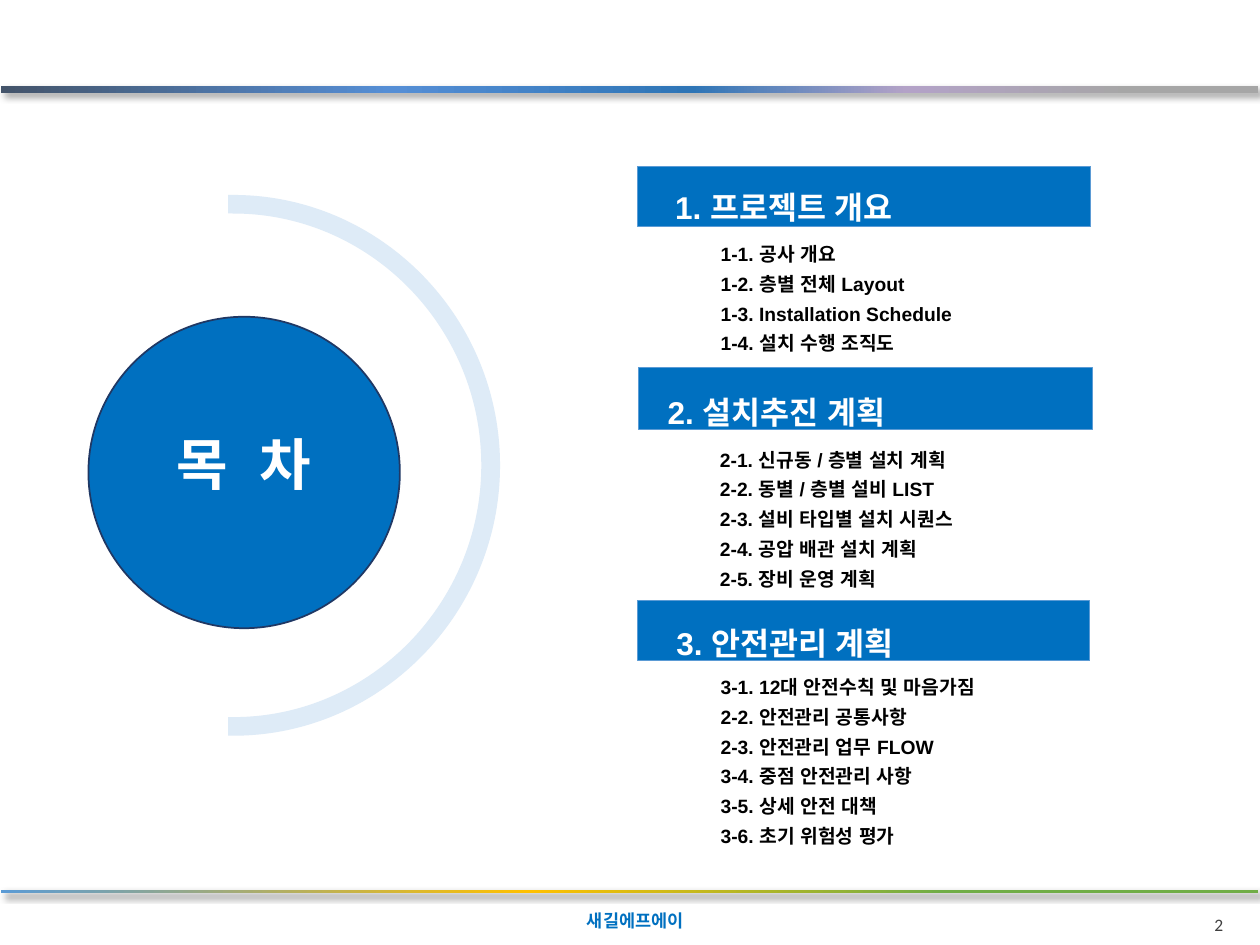
from lxml.etree import SubElement
from pptx import Presentation
from pptx.dml.color import RGBColor
from pptx.enum.shapes import MSO_SHAPE as Shape
from pptx.enum.text import MSO_ANCHOR as Anchor, MSO_AUTO_SIZE as AutoSize, PP_ALIGN as Align
from pptx.oxml import parse_xml
from pptx.oxml.ns import nsdecls, qn
from pptx.util import Pt

BLUE = "0070C0"


def color(value):
    return RGBColor.from_string(value)


class Page:
    def __init__(self, slide, face="Arial"):
        self.shapes = slide.shapes
        self.face = face

    def paint(self, shape, fill, edge, weight):
        shape.shadow.inherit = False
        shape.fill.solid()
        shape.fill.fore_color.rgb = color(fill)
        shape.line.color.rgb = color(edge)
        shape.line.width = Pt(weight)

    def block(self, kind, box, fill, edge, weight):
        self.paint(self.shapes.add_shape(kind, *map(Pt, box)), fill, edge, weight)

    def rule(self, box, stops):
        shape = self.shapes.add_shape(Shape.RECTANGLE, *map(Pt, box))
        shape.line.fill.background()
        marks = "".join(
            f'<a:gs pos="{place * 1000}"><a:srgbClr val="{tint}"/></a:gs>'
            for place, tint in stops
        )
        properties = shape._element.spPr
        properties.find(qn("a:prstGeom")).addnext(parse_xml(
            f'<a:gradFill {nsdecls("a")} rotWithShape="1"><a:gsLst>{marks}</a:gsLst>'
            '<a:lin ang="0" scaled="0"/></a:gradFill>'
        ))
        properties.append(parse_xml(
            f'<a:effectLst {nsdecls("a")}>'
            f'<a:outerShdw blurRad="{Pt(4)}" dist="{Pt(3)}" dir="2700000" algn="tl" rotWithShape="0">'
            '<a:srgbClr val="000000"><a:alpha val="40000"/></a:srgbClr>'
            '</a:outerShdw></a:effectLst>'
        ))

    def arc(self, left, middle, outer, inner, tint, weight):
        def half_ring(radii, side):
            across, down = radii
            bend_x, bend_y = across * 0.55, down * 0.55
            return [(left + x, middle + side * y) for x, y in (
                (0, down), (bend_x, down), (across, bend_y), (across, 0),
                (across, -bend_y), (bend_x, -down), (0, -down),
            )]

        points = [(Pt(x), Pt(y)) for x, y in half_ring(inner, -1) + half_ring(outer, 1)]
        builder = self.shapes.build_freeform(*points[0])
        builder.add_line_segments(points[1:], close=True)
        shape = builder.convert_to_shape()
        steps = list(shape._element.iter(qn("a:lnTo")))
        for first in (0, 3, 7, 10):
            curve = parse_xml(f'<a:cubicBezTo {nsdecls("a")}/>')
            steps[first].addprevious(curve)
            for step in steps[first:first + 3]:
                curve.append(step[0])
                step.getparent().remove(step)
        self.paint(shape, tint, tint, weight)
        SubElement(shape.line._get_or_add_ln(), qn("a:miter")).set("lim", "800000")

    def text(self, box, lines, size, tint, bold=True, face=None, align=Align.LEFT,
             anchor=Anchor.TOP, insets=(7.2, 3.6, 7.2, 3.6), spacing=None,
             grow=False, wrap=True, tracking=None):
        frame = self.shapes.add_textbox(*map(Pt, box)).text_frame
        frame.word_wrap = wrap
        frame.auto_size = AutoSize.SHAPE_TO_FIT_TEXT if grow else AutoSize.NONE
        frame.vertical_anchor = anchor
        frame.margin_left, frame.margin_top, frame.margin_right, frame.margin_bottom = map(Pt, insets)
        for index, line in enumerate(lines):
            paragraph = frame.add_paragraph() if index else frame.paragraphs[0]
            paragraph.alignment = align
            if spacing:
                paragraph.line_spacing = spacing
            for piece in [line] if isinstance(line, str) else line:
                run = paragraph.add_run()
                run.text = piece
                run.font.size = Pt(size)
                run.font.bold = bold
                run.font.name = face or self.face
                run.font.color.rgb = color(tint)
                style = run._r.get_or_add_rPr()
                SubElement(style, qn("a:ea")).set("typeface", face or self.face)
                if piece == " " and tracking:
                    style.set("spc", str(tracking))

    def section(self, bar, title_at, list_box, title, items):
        self.block(Shape.RECTANGLE, bar, BLUE, "5B9BD5", 0.75)
        self.text((*title_at, 258.5, 35.3), [title], 18, "FFFFFF",
                  insets=(21.5, 3.6, 6.5, 3.6), spacing=1.5, grow=True)
        self.text(list_box, items, 11, "000000",
                  insets=(0, 3.6, 7.2, 3.6), spacing=Pt(17), grow=True)


SECTIONS = [
    ((364.3, 95, 259, 34.5), (364.3, 92.9), (411.8, 131.2, 205, 74.2), "1. 프로젝트 개요", [
        "1-1. 공사 개요",
        "1-2. 층별 전체 Layout",
        "1-3. Installation Schedule",
        "1-4. 설치 수행 조직도",
    ]),
    ((365, 210, 259.3, 35.6), (360, 210), (411.4, 248.6, 203.8, 91.4), "2. 설치추진 계획", [
        "2-1. 신규동 / 층별 설치 계획",
        "2-2. 동별 / 층별 설비 LIST",
        "2-3. 설비 타입별 설치 시퀀스",
        "2-4. 공압 배관 설치 계획",
        "2-5. 장비 운영 계획",
    ]),
    ((364.3, 343.2, 258.5, 34.4), (365, 342), (411.8, 378.6, 211, 108), "3. 안전관리 계획", [
        "3-1. 12대 안전수칙 및 마음가짐",
        "2-2. 안전관리 공통사항",
        "2-3. 안전관리 업무 FLOW",
        "3-4. 중점 안전관리 사항",
        "3-5. 상세 안전 대책",
        "3-6. 초기 위험성 평가",
    ]),
]


def main():
    deck = Presentation()
    deck.slide_width, deck.slide_height = Pt(720), Pt(540)
    page = Page(deck.slides.add_slide(deck.slide_layouts[6]))

    page.text((333.4, 514.4, 157, 23), ["새길에프에이"], 10, BLUE, face="Noto Sans CJK KR",
              anchor=Anchor.MIDDLE, insets=(2, 2, 2, 2))
    page.rule((0.5, 49, 718.5, 4), [
        (0, "44546A"), (31, "558ED5"), (55, "2E75B6"), (72, "B3A2C7"), (90, "A6A6A6"),
    ])
    page.rule((0.5, 508.7, 718.5, 1.7), [(0, "5B9BD5"), (42, "FFC000"), (75, "70AD47")])

    page.block(Shape.OVAL, (50.5, 181, 178, 178), BLUE, "203864", 1)
    page.text((50.4, 240.5, 178, 48), [["목", " ", "차"]], 32, "FFFFFF",
              align=Align.CENTER, anchor=Anchor.MIDDLE, wrap=False, tracking=890)
    page.arc(133.3, 265.9, (149.4, 151.5), (144.7, 146.9), "DEEBF7", 6)

    for section in SECTIONS:
        page.section(*section)

    page.text((614.7, 518.7, 91.4, 15), ["2"], 10, "404040", bold=False,
              face="Calibri", align=Align.RIGHT)
    deck.save("out.pptx")


if __name__ == "__main__":
    main()
